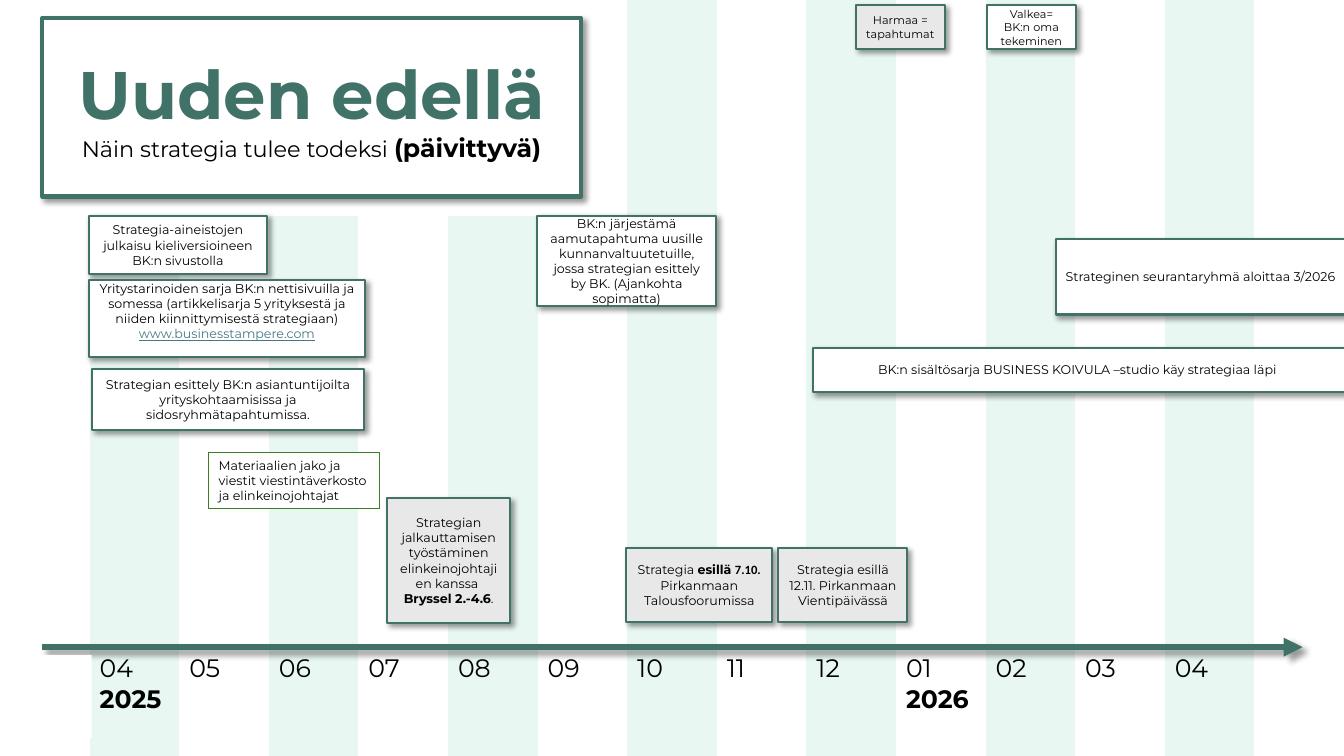
from lxml import etree
from pptx import Presentation
from pptx import util as u
from pptx.dml.color import RGBColor
from pptx.enum import shapes, text
from pptx.oxml.ns import qn

GREEN = RGBColor(0x40, 0x72, 0x68)
LEAF = RGBColor(0x3B, 0x7D, 0x23)
MINT = RGBColor(0xE9, 0xF7, 0xF3)
GREY = RGBColor(0xE8, 0xE8, 0xE8)
WHITE = RGBColor(0xFF, 0xFF, 0xFF)
BLACK = RGBColor(0, 0, 0)
LINK = RGBColor(0x46, 0x78, 0x86)
NO_GRID_STYLE = "{2D5ABB26-0587-4C30-8999-92F81FD0307C}"

MONTHS = ["04", "05", "06", "07", "08", "09", "10", "11", "12", "01", "02", "03", "04"]
YEARS = {1: "2025", 10: "2026"}  # table column: year
BOLD = {"bold": True}


class TimelineSlide:
    font_name = "Montserrat"

    def __init__(self, presentation):
        self.slide = presentation.slides.add_slide(presentation.slide_layouts[5])
        self.shapes = self.slide.shapes

    def add_text(self, frame, paragraphs, size, align=text.PP_ALIGN.CENTER):
        """Each paragraph is a list of (text, format values) runs."""
        for index, runs in enumerate(paragraphs):
            paragraph = frame.add_paragraph() if index else frame.paragraphs[0]
            paragraph.alignment = align
            for words, changes in runs:
                values = {"name": self.font_name, "size": u.Pt(size), "bold": False,
                          "color": BLACK, **changes}
                run = paragraph.add_run()
                run.text = words
                run.font.color.rgb = values.pop("color")
                for name, value in values.items():
                    setattr(run.font, name, value)

    def set_effects(self, shape, distance):
        """Give the shape a soft shadow, or none when distance is 0."""
        effects = etree.SubElement(shape._element.spPr, qn("a:effectLst"))
        if distance:
            shadow = etree.SubElement(effects, qn("a:outerShdw"), blurRad=str(u.Pt(4)),
                                      dist=str(u.Pt(distance)), dir="2700000",
                                      algn="tl", rotWithShape="0")
            color = etree.SubElement(shadow, qn("a:srgbClr"), val=str(BLACK))
            etree.SubElement(color, qn("a:alpha"), val="40000")

    def paint(self, shape, fill, line, width, distance):
        shape.fill.solid()
        shape.fill.fore_color.rgb = fill
        if line is None:
            shape.line.fill.background()
        else:
            shape.line.color.rgb = line
            shape.line.width = u.Pt(width)
        self.set_effects(shape, distance)

    def calendar(self, columns, rows):
        frame = self.shapes.add_table(rows, columns, 0, 0, u.Inches(13.33), u.Inches(7.5))
        table = frame.table
        table.first_row = table.horz_banding = False
        table._tbl.tblPr.find(qn("a:tableStyleId")).text = NO_GRID_STYLE
        for column in table.columns:
            column.width = u.Inches(13.33 / columns)
        for row in table.rows:
            row.height = u.Inches(7.5 / rows)
        # Every second column is mint, except behind the title
        for row in range(rows):
            for column in range(columns):
                cell = table.cell(row, column)
                if column % 2 and (row > 1 or column > 6):
                    cell.fill.solid()
                    cell.fill.fore_color.rgb = MINT
                else:
                    cell.fill.background()
        # Merged areas: title, left columns, right columns
        table.cell(0, 0).merge(table.cell(1, 6))
        table.cell(2, 0).merge(table.cell(6, 0))
        for column in range(1, 7):
            table.cell(2, column).merge(table.cell(5, column))
        for column in (7, 8, 10, 11, 12, 13):
            table.cell(0, column).merge(table.cell(5, column))
        table.cell(0, 14).merge(table.cell(6, 14))
        # Month and year labels
        for column, month in enumerate(MONTHS, 1):
            labels = [[(month, {})]]
            if column in YEARS:
                labels.append([(YEARS[column], BOLD)])
            self.add_text(table.cell(6, column).text_frame, labels, 18, text.PP_ALIGN.LEFT)

    def arrow(self, left, right, y):
        arrow = self.shapes.add_connector(shapes.MSO_CONNECTOR.STRAIGHT, u.Inches(left),
                                          u.Inches(y), u.Inches(right), u.Inches(y))
        arrow.line.color.rgb = GREEN
        arrow.line.width = u.Pt(4.5)
        etree.SubElement(arrow.line._get_or_add_ln(), qn("a:tailEnd"), type="triangle")
        self.set_effects(arrow, 4)

    def title(self, left, top, width, height, paragraphs):
        title = self.shapes.title
        title.left, title.top = u.Inches(left), u.Inches(top)
        title.width, title.height = u.Inches(width), u.Inches(height)
        outline = etree.SubElement(title._element.spPr, qn("a:prstGeom"), prst="roundRect")
        etree.SubElement(outline, qn("a:avLst"))
        self.paint(title, WHITE, GREEN, 3, 3)
        self.shapes._spTree.append(title._element)  # in front of the calendar
        frame = title.text_frame
        frame.word_wrap = True
        frame.auto_size = text.MSO_AUTO_SIZE.NONE
        frame.vertical_anchor = text.MSO_ANCHOR.MIDDLE
        self.add_text(frame, paragraphs, 16)

    def box(self, left, top, width, height, paragraphs=(), fill=WHITE, size=9, line=GREEN,
            line_width=1.5, shadow=3, align=text.PP_ALIGN.CENTER,
            anchor=text.MSO_ANCHOR.MIDDLE, margins=(0.05, 0.05)):
        shape = self.shapes.add_shape(shapes.MSO_SHAPE.RECTANGLE, u.Inches(left),
                                      u.Inches(top), u.Inches(width), u.Inches(height))
        self.paint(shape, fill, line, line_width, shadow)
        frame = shape.text_frame
        frame.word_wrap = True
        frame.vertical_anchor = anchor
        frame.margin_top, frame.margin_bottom = map(u.Inches, margins)
        self.add_text(frame, paragraphs, size, align)


def main():
    presentation = Presentation()
    presentation.slide_width = u.Inches(13.33)
    presentation.slide_height = u.Inches(7.5)
    timeline = TimelineSlide(presentation)

    # Calendar, time axis and title
    timeline.calendar(columns=15, rows=7)
    timeline.arrow(0.42, 12.92, 6.42)
    timeline.title(0.42, 0.18, 5.34, 1.77, [
        [("Uuden edellä", {"size": u.Pt(48), "bold": True, "color": GREEN})],
        [("Näin strategia tulee todeksi ", {}),
         ("(päivittyvä)", {"size": u.Pt(18), "bold": True})]])

    # Spring 2025
    timeline.box(0.88, 2.14, 1.77, 0.58, [
        [("Strategia-aineistojen julkaisu kieliversioineen BK:n sivustolla", {})]])
    timeline.box(0.88, 2.78, 2.74, 0.76, [
        [("Yritystarinoiden sarja BK:n nettisivuilla ja somessa (artikkelisarja 5 "
          "yrityksestä ja niiden kiinnittymisestä strategiaan)", {})],
        [("www.businesstampere.com", {"color": LINK, "underline": True})]],
        margins=(0, 0.15))
    timeline.box(0.91, 3.66, 2.7, 0.61, [
        [("Strategian esittely BK:n asiantuntijoilta yrityskohtaamisissa ja "
          "sidosryhmätapahtumissa.", {})]])
    timeline.box(3.84, 4.94, 1.22, 1.24, [
        [("Strategian jalkauttamisen työstäminen elinkeinojohtajien kanssa ", {})],
        [("Bryssel 2.-4.6", BOLD), (".", {})]], GREY)

    # Autumn 2025
    timeline.box(5.33, 2.14, 1.77, 0.9, [
        [("BK:n järjestämä aamutapahtuma uusille kunnanvaltuutetuille, jossa strategian "
          "esittely by BK. (Ajankohta sopimatta)", {})]])
    timeline.box(6.21, 5.44, 1.45, 0.73, [
        [("Strategia ", {}), ("esillä ", BOLD), ("7.10. ", {"name": "Calibri", "bold": True}),
         ("Pirkanmaan Talousfoorumissa", {})]], GREY)
    timeline.box(7.72, 5.44, 1.28, 0.73, [
        [("Strategia esillä 12.11. Pirkanmaan Vientipäivässä", {})]], GREY)

    # Colour key
    timeline.box(8.49, 0.05, 0.88, 0.44, [[("Harmaa = tapahtumat", {})]], GREY, size=8)
    timeline.box(9.79, 0.05, 0.88, 0.44, [[("Valkea= BK:n oma tekeminen", {})]], size=8)

    # Blank area before the first month
    timeline.box(0, 6.5, 0.91, 0.82, line=None, shadow=0)

    # Shared materials and 2026
    timeline.box(2.07, 4.49, 1.69, 0.56, [
        [("Materiaalien jako ja viestit viestintäverkosto ja elinkeinojohtajat", {})]],
        line=LEAF, line_width=0.75, shadow=0, align=text.PP_ALIGN.LEFT,
        anchor=text.MSO_ANCHOR.TOP)
    timeline.box(8.06, 3.45, 5.28, 0.44, [
        [("BK:n sisältösarja BUSINESS KOIVULA –studio käy strategiaa läpi ", {})]])
    timeline.box(10.47, 2.37, 2.87, 0.75, [
        [("Strateginen seurantaryhmä aloittaa 3/2026", {})]])

    presentation.save("out.pptx")


if __name__ == "__main__":
    main()
